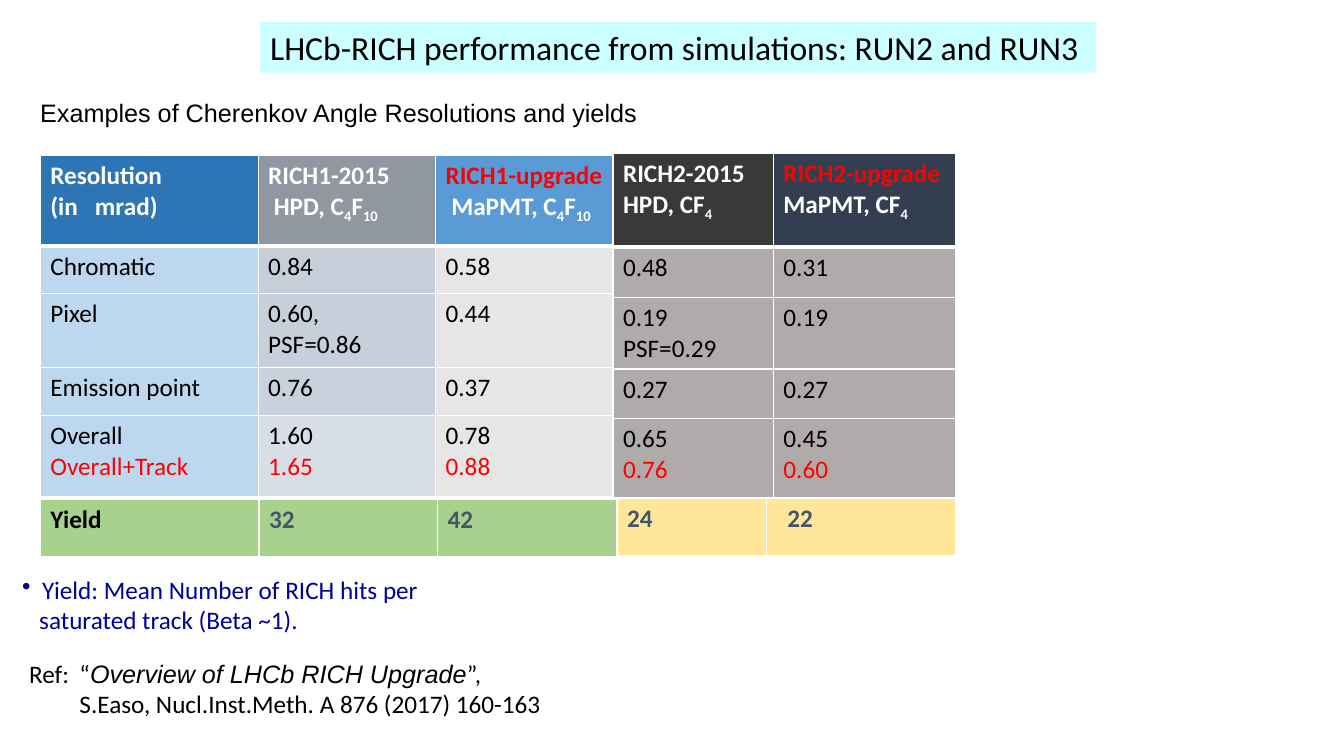
from dataclasses import dataclass, replace

from lxml import etree
from pptx import Presentation
from pptx.dml.color import RGBColor
from pptx.enum.text import MSO_ANCHOR, MSO_AUTO_SIZE, PP_ALIGN
from pptx.oxml.ns import qn
from pptx.util import Pt

PX = 9144  # EMU per px, 100 px to the inch
LEFT = PP_ALIGN.LEFT
TOP = MSO_ANCHOR.TOP
NO_AUTOFIT = MSO_AUTO_SIZE.NONE
TITLE_ONLY = 5

COLORS = {
    "white": "FFFFFF", "black": "000000", "red": "FF0000", "navy": "000099",
    "slate": "44546A", "cyan": "CCFFFF", "blue": "2E75B6", "sky": "5B9BD5",
    "pale blue": "BDD7EE", "steel": "8497B0", "ink": "333F50",
    "charcoal": "3B3838", "light grey": "E7E6E6", "grey": "AFABAB",
    "green": "A9D18E", "yellow": "FFE699",
}


@dataclass(frozen=True)
class Span:
    text: str
    color: str = "black"
    bold: bool = False
    italic: bool = False
    subscript: bool = False
    font: str = "Calibri"
    size: int = 18


@dataclass(frozen=True)
class Para:
    spans: tuple[Span, ...]
    margin: int = 0
    hanging: int = 0
    bullet: str = ""


@dataclass(frozen=True)
class Cell:
    paras: tuple[Para, ...]
    fill: str
    alpha: int = 100
    margin: int = 10


@dataclass(frozen=True)
class Grid:
    left: int
    top: int
    columns: tuple[int, ...]
    rows: tuple[int, ...]
    cells: tuple[tuple[Cell, ...], ...]


@dataclass(frozen=True)
class Note:
    left: int
    top: int
    width: int
    height: int
    paras: tuple[Para, ...]


def plain(text: str, color: str = "black", bold: bool = False) -> Para:
    return Para((Span(text, color, bold),))


def formula(text: str) -> tuple[Span, ...]:
    """Bold white spans from text in which _ switches subscript on and off."""
    return tuple(Span(part, "white", True, subscript=index % 2 == 1)
                 for index, part in enumerate(text.split("_")) if part)


def header(name: str, gas: str, fill: str, alpha: int = 100) -> Cell:
    return Cell((plain(name, "white", True), Para(formula(gas))), fill, alpha)


def upgrade_header(name: str, gas: str, fill: str) -> Cell:
    return Cell((Para((Span(name, "red", True),)), Para(formula(gas))), fill)


def value(text: str, fill: str, alpha: int = 100) -> Cell:
    return Cell(tuple(plain(line) for line in text.split("\n")), fill, alpha)


def overall(text: str, with_track: str, fill: str, alpha: int = 100) -> Cell:
    return Cell((plain(text), plain(with_track, "red")), fill, alpha)


def count(text: str, fill: str, color: str = "slate") -> Cell:
    return Cell((plain(text, color, True),), fill)


def rgb(name: str) -> RGBColor:
    return RGBColor.from_string(COLORS[name])


def write(frame, paras: tuple[Para, ...]) -> None:
    for index, para in enumerate(paras):
        paragraph = frame.paragraphs[0] if index == 0 else frame.add_paragraph()
        paragraph.alignment = LEFT
        properties = paragraph._p.get_or_add_pPr()
        properties.set("marL", str(para.margin * PX))
        properties.set("indent", str(-para.hanging * PX))
        if para.bullet:
            etree.SubElement(properties, qn("a:buChar"), char=para.bullet)
        for span in para.spans:
            run = paragraph.add_run()
            run.text = span.text
            run.font.name = span.font
            run.font.size = Pt(span.size)
            run.font.bold = span.bold
            run.font.italic = span.italic
            run.font.color.rgb = rgb(span.color)
            if span.subscript:
                run.font._element.set("baseline", "-25000")


def set_borders(cell, top: int, bottom: int) -> None:
    """White borders, one point at the sides; widths in points."""
    properties = cell._tc.get_or_add_tcPr()
    widths = {"a:lnL": 1, "a:lnR": 1, "a:lnT": top, "a:lnB": bottom}
    for index, (tag, width) in enumerate(widths.items()):
        line = etree.Element(qn(tag), w=str(Pt(width)))
        fill = etree.SubElement(line, qn("a:solidFill"))
        etree.SubElement(fill, qn("a:srgbClr"), val=COLORS["white"])
        properties.insert(index, line)


def fill_cell(cell, content: Cell) -> None:
    cell.fill.solid()
    cell.fill.fore_color.rgb = rgb(content.fill)
    if content.alpha < 100:
        color = cell._tc.tcPr.find(".//" + qn("a:srgbClr"))
        etree.SubElement(color, qn("a:alpha"), val=str(content.alpha * 1000))
    cell.margin_left = content.margin * PX
    write(cell.text_frame, content.paras)


def draw_grid(page, grid: Grid) -> None:
    table = page.shapes.add_table(
        len(grid.rows), len(grid.columns), grid.left * PX, grid.top * PX,
        sum(grid.columns) * PX, sum(grid.rows) * PX).table
    table.first_row = table.horz_banding = False
    for column, width in zip(table.columns, grid.columns):
        column.width = width * PX
    for index, (row, height) in enumerate(zip(table.rows, grid.rows)):
        row.height = height * PX
        for cell, content in zip(row.cells, grid.cells[index]):
            fill_cell(cell, content)
            set_borders(cell, 3 if index == 1 else 1, 3 if index == 0 else 1)


def draw_note(page, note: Note) -> None:
    box = page.shapes.add_textbox(note.left * PX, note.top * PX,
                                  note.width * PX, note.height * PX)
    box.text_frame.word_wrap = True
    write(box.text_frame, note.paras)


def draw_title(page, text: str) -> None:
    title = page.shapes.title
    title.left, title.top, title.width, title.height = (
        length * PX for length in (258, 22, 829, 50))
    title.fill.solid()
    title.fill.fore_color.rgb = rgb("cyan")
    frame = title.text_frame
    frame.auto_size = NO_AUTOFIT
    frame.word_wrap = True
    frame.vertical_anchor = TOP
    write(frame, (Para((Span(text, size=24),)),))


RICH1 = Grid(40, 154, (216, 176, 176), (90, 47, 74, 47, 81), (
    (header("Resolution", "(in   mrad)", "blue"),
     header("RICH1-2015", " HPD, C_4_F_10_", "ink", 54),
     upgrade_header("RICH1-upgrade", " MaPMT, C_4_F_10_", "sky")),
    (value("Chromatic", "pale blue"), value("0.84", "steel", 47),
     value("0.58", "light grey")),
    (value("Pixel", "pale blue"), value("0.60,\nPSF=0.86", "steel", 46),
     value("0.44", "light grey")),
    (value("Emission point", "pale blue"), value("0.76", "steel", 43),
     value("0.37", "light grey")),
    (overall("Overall", "Overall+Track", "pale blue"),
     overall("1.60", "1.65", "steel", 31), overall("0.78", "0.88", "light grey")),
))
RICH2 = Grid(608, 152, (159, 181), (93, 50, 70, 49, 79), (
    (header("RICH2-2015", "HPD, CF_4_", "charcoal"),
     upgrade_header("RICH2-upgrade", "MaPMT, CF_4_", "ink")),
    (value("0.48", "grey"), value("0.31", "grey")),
    (value("0.19\nPSF=0.29", "grey"), value("0.19", "grey")),
    (value("0.27", "grey"), value("0.27", "grey")),
    (overall("0.65", "0.76", "grey"), overall("0.45", "0.60", "grey")),
))
RICH1_YIELD = Grid(40, 495, (217, 177, 178), (58,), (
    (count("Yield", "green", "black"), count("32", "green"), count("42", "green")),))
RICH2_YIELD = Grid(612, 494, (148, 188), (58,), (
    (count("24", "yellow"), replace(count("22", "yellow"), margin=21)),))

NOTES = (
    Note(30, 92, 697, 40, (Para((Span(
        "Examples of Cherenkov Angle Resolutions and yields", font="Arial"),)),)),
    Note(12, 565, 422, 71, (
        Para((Span("Yield: Mean Number of RICH hits per", "navy"),), 20, 20, "•"),
        Para((Span("saturated track (Beta ~1).", "navy"),), 17))),
    Note(19, 648, 546, 71, (
        Para((Span("Ref:\t“"),
              Span("Overview of LHCb RICH Upgrade", italic=True, font="Arial"),
              Span("”,")), 50, 50),
        Para((Span("S.Easo, Nucl.Inst.Meth. A 876 (2017) 160-163"),), 50))),
)


def main() -> None:
    deck = Presentation()
    deck.slide_width, deck.slide_height = 1333 * PX, 750 * PX
    page = deck.slides.add_slide(deck.slide_layouts[TITLE_ONLY])
    draw_title(page, "LHCb-RICH performance from simulations: RUN2 and RUN3")
    for grid in (RICH1, RICH2, RICH1_YIELD, RICH2_YIELD):
        draw_grid(page, grid)
    for note in NOTES:
        draw_note(page, note)
    deck.save("out.pptx")


if __name__ == "__main__":
    main()
